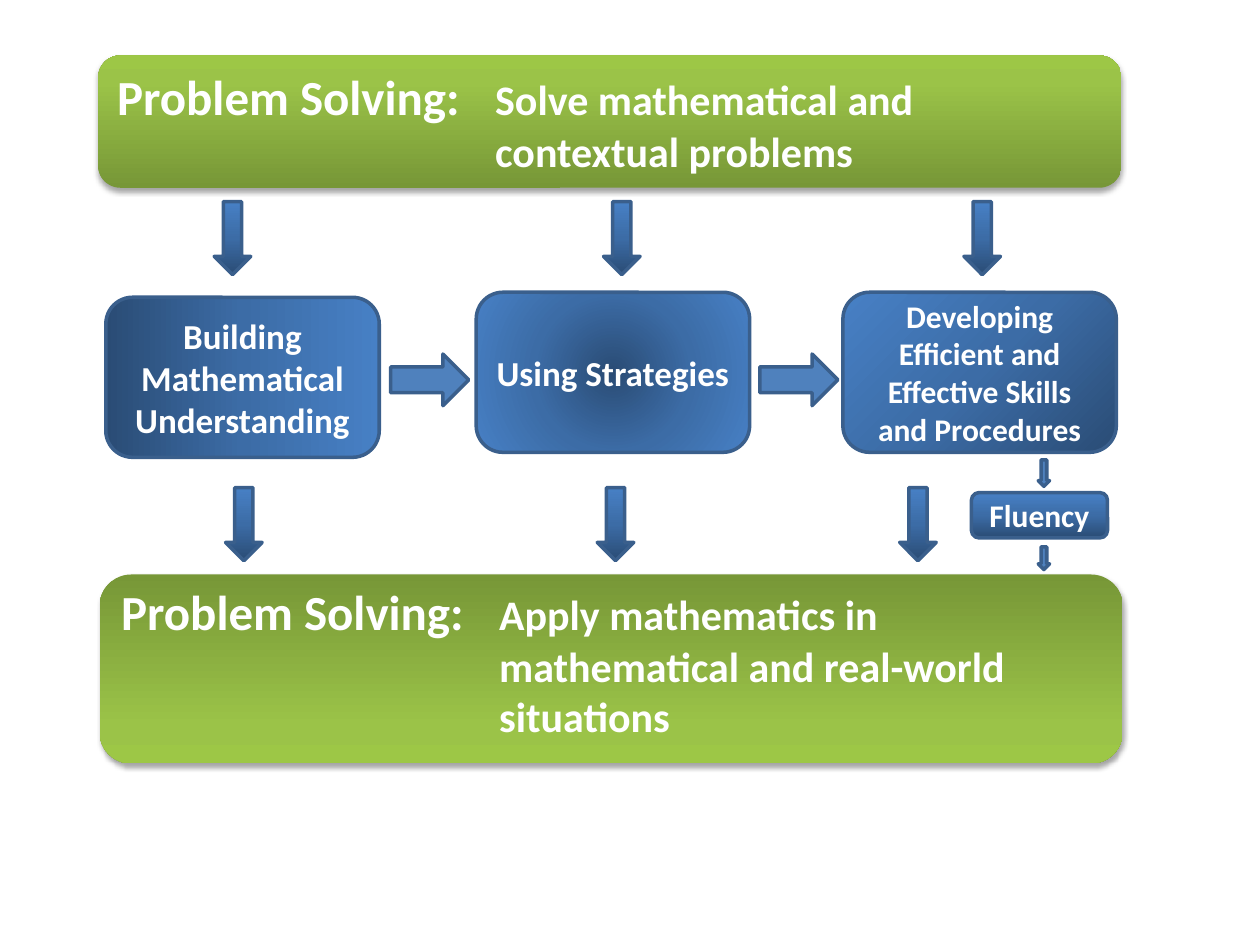
"""Build the slide that shows how problem solving frames understanding, strategies and skills."""
from dataclasses import dataclass

from lxml import etree
from pptx import Presentation
from pptx.dml.color import RGBColor
from pptx.enum.shapes import MSO_SHAPE as Shape
from pptx.enum.text import MSO_ANCHOR as Anchor, PP_ALIGN as Align
from pptx.oxml.ns import qn
from pptx.util import Inches, Pt


@dataclass(frozen=True)
class Theme:
    font: str = "Calibri"
    text: str = "FFFFFF"
    arrow: str = "4F81BD"
    outline: str = "3A5F8C"
    shadow: str = "000000"
    blue: tuple = ((0, "2A4C75"), (50, "3C6CA6"), (100, "4780C5"))
    green: tuple = ((0, "779737"), (80, "9BC348"), (100, "9DC746"))
    heading: int = 28
    statement: int = 24
    step: int = 20
    detail: int = 18
    border: int = 2


theme = Theme()


def add_block(kind, left, top, width, height, stops=None, angle=None, outlined=True):
    block = slide.shapes.add_shape(kind, Inches(left), Inches(top), Inches(width), Inches(height))
    block.shadow.inherit = False
    if stops:
        block.fill.gradient()
        gradient = block._element.spPr.find(qn("a:gradFill"))
        gradient.clear()
        gradient.set("rotWithShape", "1")
        stop_list = etree.SubElement(gradient, qn("a:gsLst"))
        for percent, color in stops:
            stop = etree.SubElement(stop_list, qn("a:gs"), pos=str(percent * 1000))
            etree.SubElement(stop, qn("a:srgbClr"), val=color)
        if angle is None:
            radial = etree.SubElement(gradient, qn("a:path"), path="circle")
            etree.SubElement(radial, qn("a:fillToRect"), l="50000", t="50000", r="50000", b="50000")
        else:
            etree.SubElement(gradient, qn("a:lin"), ang=str(angle * 60000), scaled="0")
    else:
        block.fill.solid()
        block.fill.fore_color.rgb = RGBColor.from_string(theme.arrow)
    if outlined:
        block.line.color.rgb = RGBColor.from_string(theme.outline)
        block.line.width = Pt(theme.border)
    else:
        block.line.fill.background()
    return block


def write(block, *texts, sizes, align=Align.CENTER, hanging=0, side=0.09, bottom=0.05):
    frame = block.text_frame
    frame.word_wrap = True
    frame.vertical_anchor = Anchor.MIDDLE
    frame.margin_left = frame.margin_right = Inches(side)
    frame.margin_top, frame.margin_bottom = Inches(0.05), Inches(bottom)
    paragraph = frame.paragraphs[0]
    paragraph.alignment = align
    if hanging:
        properties = paragraph._p.get_or_add_pPr()
        properties.set("marL", str(Inches(hanging)))
        properties.set("indent", str(-Inches(hanging)))
    for text, size in zip(texts, sizes):
        run = paragraph.add_run()
        run.text = text
        run.font.name = theme.font
        run.font.size = Pt(size)
        run.font.bold = True
        run.font.color.rgb = RGBColor.from_string(theme.text)


presentation = Presentation()
presentation.slide_width, presentation.slide_height = Inches(10), Inches(7.5)
slide = presentation.slides.add_slide(presentation.slide_layouts[6])

banners = [
    (0.78, 0.44, 1.05, 270, 0.05, "Solve mathematical and contextual problems"),
    (0.79, 4.56, 1.5, 90, 0.17, "Apply mathematics in mathematical and real-world situations"),
]
for left, top, height, angle, bottom, statement in banners:
    banner = add_block(Shape.ROUNDED_RECTANGLE, left, top, 8.12, height, theme.green, angle, outlined=False)
    effects = banner._element.spPr.find(qn("a:effectLst"))
    shadow = etree.SubElement(effects, qn("a:outerShdw"), blurRad=str(Pt(3.1)), dist=str(Pt(1.8)),
                              dir="5400000", rotWithShape="0")
    shade = etree.SubElement(shadow, qn("a:srgbClr"), val=theme.shadow)
    etree.SubElement(shade, qn("a:alpha"), val="35000")
    write(banner, "Problem Solving:\t", statement, sizes=(theme.heading, theme.statement),
          align=Align.LEFT, hanging=3, side=0.1, bottom=bottom)

steps = [
    (0.84, 2.36, 0, theme.step, "Building Mathematical Understanding"),
    (3.78, 2.32, None, theme.step, "Using Strategies"),
    (6.69, 2.32, 225, theme.detail, "Developing Efficient and Effective Skills and Procedures"),
]
for left, top, angle, size, label in steps:
    step = add_block(Shape.ROUNDED_RECTANGLE, left, top, 2.17, 1.27, theme.blue, angle)
    write(step, label, sizes=(size,))

for top, lefts in ((1.6, (1.7, 4.79, 7.65)), (3.87, (1.79, 4.74, 7.14))):
    for left in lefts:
        add_block(Shape.DOWN_ARROW, left, top, 0.29, 0.58, theme.blue, 270)

for left in (3.1, 6.03):
    add_block(Shape.RIGHT_ARROW, left, 2.81, 0.62, 0.41)

fluency = add_block(Shape.ROUNDED_RECTANGLE, 7.71, 3.91, 1.08, 0.36, theme.blue, 270)
write(fluency, "Fluency", sizes=(theme.detail,))
for top, height in ((3.65, 0.21), (4.34, 0.18)):
    add_block(Shape.DOWN_ARROW, 8.24, top, 0.09, height)

presentation.save("out.pptx")
